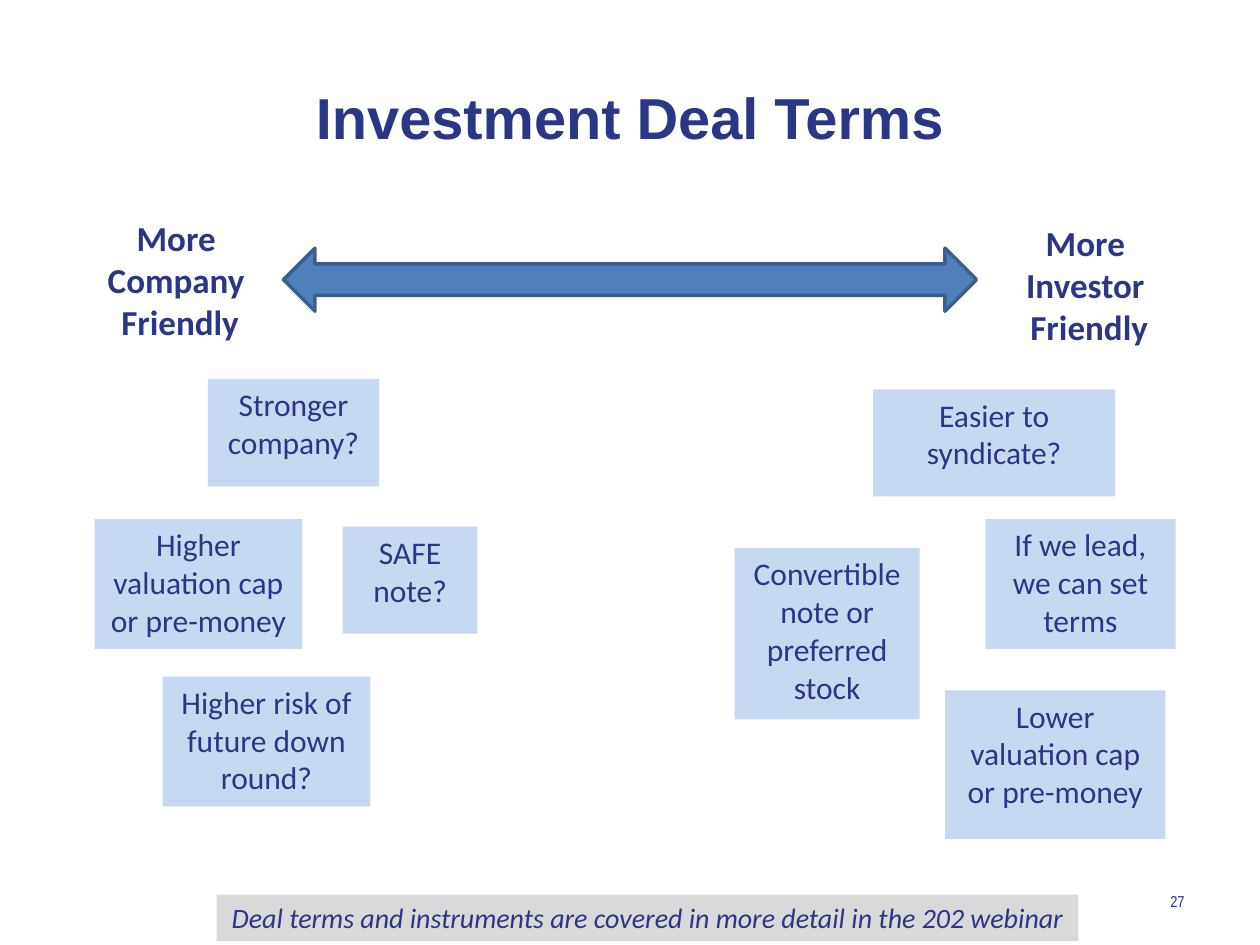
from pptx import Presentation
from pptx.dml.color import RGBColor
from pptx.enum.shapes import MSO_SHAPE
from pptx.enum.text import MSO_ANCHOR, MSO_AUTO_SIZE, PP_ALIGN
from pptx.util import Inches, Pt

COLORS = {
    "ink": "2B3686",
    "card": "C6D9F1",
    "arrow": "4F81BD",
    "arrow_edge": "3A5F8C",
    "footnote": "D9D9D9",
}
COLUMNS, ROWS = 100, 75

# Text, then left, top, width and height in grid cells
AXIS_ENDS = [
    ("More \nCompany \vFriendly", (7.5, 16.7, 13.6, 11.1)),
    ("More \nInvestor \vFriendly", (80.4, 17.1, 12.1, 11.1)),
]
CARDS = [
    ("Stronger company?", (16.5, 30.1, 13.6, 8.5)),
    ("Higher valuation cap or pre-money", (7.5, 41.2, 16.5, 10.3)),
    ("SAFE note?", (27.2, 41.8, 10.7, 8.5)),
    ("Higher risk of future down round?", (12.9, 53.7, 16.5, 10.3)),
    ("Easier to syndicate?", (69.3, 30.9, 19.2, 8.5)),
    ("Convertible note or preferred stock", (58.3, 43.5, 14.7, 13.6)),
    ("If we lead, we can set terms", (78.2, 41.2, 15.1, 10.3)),
    ("Lower valuation cap or pre-money", (75, 54.8, 17.5, 11.8)),
]


class SlideBuilder:
    def __init__(self, presentation):
        self.cell_width = presentation.slide_width / COLUMNS
        self.cell_height = presentation.slide_height / ROWS
        self.slide = presentation.slides.add_slide(presentation.slide_layouts[6])

    def place(self, cells):
        """Turn left, top, width and height in grid cells into slide lengths."""
        left, top, width, height = cells
        return (round(left * self.cell_width), round(top * self.cell_height),
                round(width * self.cell_width), round(height * self.cell_height))

    def set_text(self, shape, text, size, font="Calibri", bold=False, italic=False,
                 align=PP_ALIGN.CENTER, anchor=MSO_ANCHOR.TOP, wrap=True):
        frame = shape.text_frame
        frame.text = text
        frame.word_wrap = wrap
        frame.vertical_anchor = anchor
        if not wrap:
            frame.auto_size = MSO_AUTO_SIZE.SHAPE_TO_FIT_TEXT
        for paragraph in frame.paragraphs:
            paragraph.alignment = align
            paragraph.font.name = font
            paragraph.font.size = Pt(size)
            paragraph.font.bold = bold
            paragraph.font.italic = italic
            paragraph.font.color.rgb = RGBColor.from_string(COLORS["ink"])

    def text(self, text, cells, size, **style):
        self.set_text(self.slide.shapes.add_textbox(*self.place(cells)), text, size, **style)

    def shape(self, kind, cells, fill):
        shape = self.slide.shapes.add_shape(kind, *self.place(cells))
        shape.shadow.inherit = False
        shape.fill.solid()
        shape.fill.fore_color.rgb = RGBColor.from_string(COLORS[fill])
        shape.line.fill.background()
        return shape

    def card(self, text, cells, size=18, fill="card", **style):
        self.set_text(self.shape(MSO_SHAPE.RECTANGLE, cells, fill), text, size, **style)

    def double_arrow(self, cells):
        arrow = self.shape(MSO_SHAPE.LEFT_RIGHT_ARROW, cells, "arrow")
        arrow.line.color.rgb = RGBColor.from_string(COLORS["arrow_edge"])
        arrow.line.width = Pt(2)


def main():
    presentation = Presentation()
    presentation.slide_width = Inches(10)
    presentation.slide_height = Inches(7.5)
    builder = SlideBuilder(presentation)

    builder.text("Investment Deal Terms", (5, 3, 90, 12.5), 33, font="Arial",
                 bold=True, anchor=MSO_ANCHOR.MIDDLE)
    builder.text("27", (89.2, 69.5, 5.8, 4), 9, font="Arial Narrow",
                 align=PP_ALIGN.RIGHT, anchor=MSO_ANCHOR.MIDDLE)
    for label, cells in AXIS_ENDS:
        builder.text(label, cells, 20, bold=True, wrap=False)
    builder.double_arrow((22.5, 19.7, 55, 5))
    for label, cells in CARDS:
        builder.card(label, cells)
    builder.card("Deal terms and instruments are covered in more detail in the 202 webinar",
                 (17.2, 71, 68.4, 3.7), size=16, fill="footnote", italic=True, wrap=False)

    presentation.save("out.pptx")


if __name__ == "__main__":
    main()
